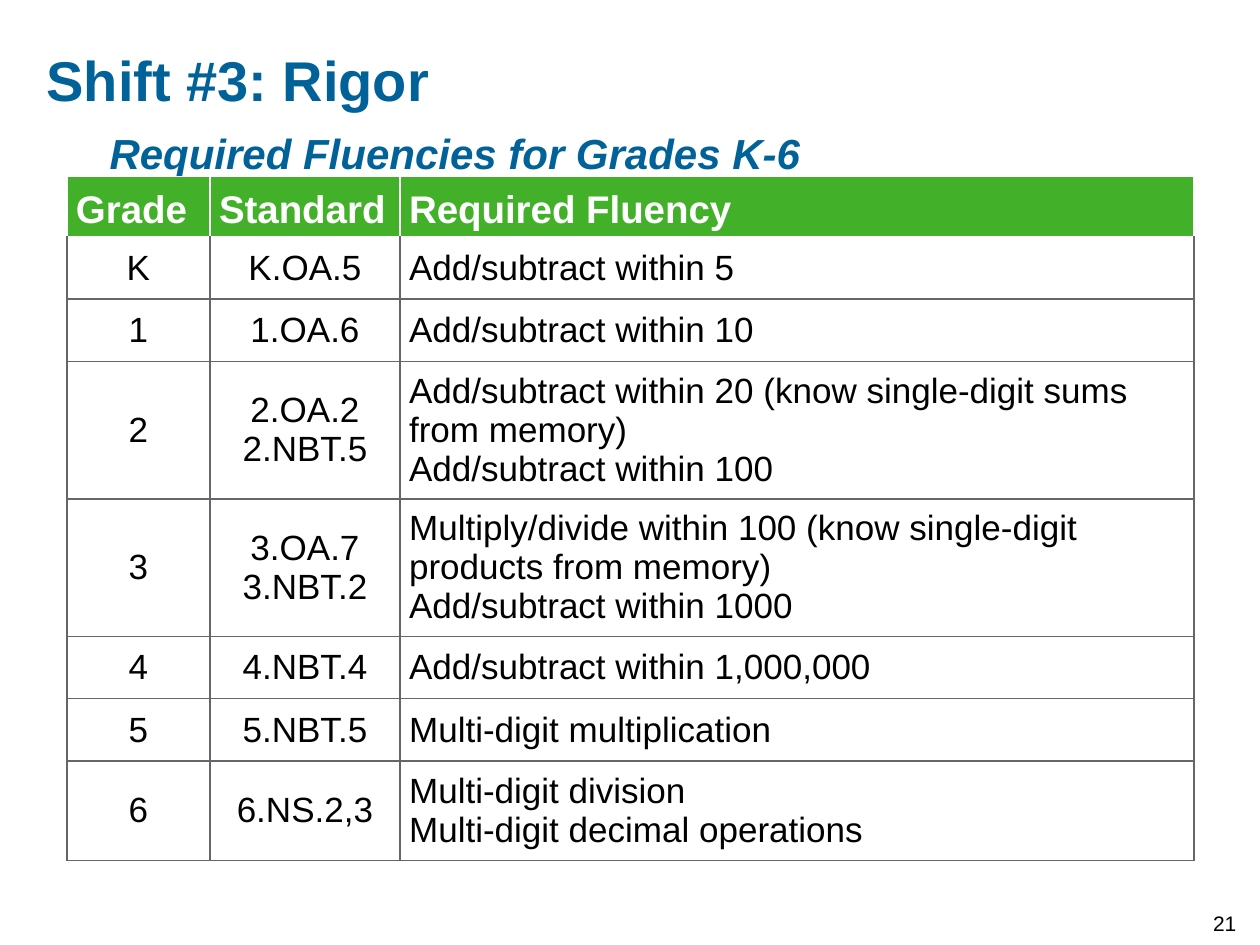
from lxml import etree
from pptx import Presentation
from pptx.dml.color import RGBColor
from pptx.enum.text import MSO_ANCHOR, MSO_AUTO_SIZE, PP_ALIGN
from pptx.oxml.ns import qn
from pptx.util import Pt

LEFT, CENTER, RIGHT = PP_ALIGN.LEFT, PP_ALIGN.CENTER, PP_ALIGN.RIGHT
MIDDLE, BOTTOM = MSO_ANCHOR.MIDDLE, MSO_ANCHOR.BOTTOM
TITLE_ONLY = 5
FONT = "Arial"
COLORS = {"blue": "006298", "green": "43B02A", "grey": "63666A",
          "white": "FFFFFF", "black": "000000"}

HEADINGS = ["Grade", "Standard", "Required Fluency"]
FLUENCIES = [
    ("K", "K.OA.5", "Add/subtract within 5"),
    ("1", "1.OA.6", "Add/subtract within 10"),
    ("2", "2.OA.2\n2.NBT.5",
     "Add/subtract within 20 (know single-digit sums from memory)\n"
     "Add/subtract within 100"),
    ("3", "3.OA.7\n3.NBT.2",
     "Multiply/divide within 100 (know single-digit products from memory)\n"
     "Add/subtract within 1000"),
    ("4", "4.NBT.4", "Add/subtract within 1,000,000"),
    ("5", "5.NBT.5", "Multi-digit multiplication"),
    ("6", "6.NS.2,3", "Multi-digit division\nMulti-digit decimal operations"),
]
COLUMN_WIDTHS = [81.8, 108.6, 453.6]
ROW_HEIGHTS = [34.4, 35.6, 35.6, 78.6, 78.6, 35.6, 35.6, 56.8]


def set_font(font, size, color, bold=False, italic=False):
    font.name = FONT
    font.size = Pt(size)
    font.bold = bold
    font.italic = italic
    font.color.rgb = RGBColor.from_string(COLORS[color])


def add_title(slide, heading, subtitle):
    """Fill the title with a heading and a tabbed subtitle on a second line."""
    title = slide.shapes.title
    title.left, title.top, title.width, title.height = (
        Pt(19.4), Pt(21.6), Pt(648), Pt(85))
    frame = title.text_frame
    frame.auto_size = MSO_AUTO_SIZE.NONE
    frame.vertical_anchor = BOTTOM
    para = frame.paragraphs[0]
    para.alignment = LEFT
    tabs = etree.SubElement(para._p.get_or_add_pPr(), qn("a:tabLst"))
    etree.SubElement(tabs, qn("a:tab"), pos=str(Pt(36)), algn="l")

    span = para.add_run()
    span.text = heading
    set_font(span.font, 32, "blue", bold=True)
    para.add_line_break()
    for text, size, italic in [("\t", 32, False), (subtitle, 24, True)]:
        span = para.add_run()
        span.text = text
        set_font(span.font, size, "blue", bold=True, italic=italic)


def set_borders(cell, color, top_color):
    properties = cell._tc.get_or_add_tcPr()
    for side in "LRTB":
        line = etree.SubElement(properties, qn(f"a:ln{side}"), w=str(Pt(1)))
        fill = etree.SubElement(line, qn("a:solidFill"))
        etree.SubElement(fill, qn("a:srgbClr"),
                         val=COLORS[top_color if side == "T" else color])


def fill_cell(cell, text, is_heading, alignment):
    cell.vertical_anchor = MIDDLE
    cell.margin_left = cell.margin_right = Pt(5.2)
    cell.margin_top = cell.margin_bottom = 0
    cell.text = text
    for para in cell.text_frame.paragraphs:
        para.alignment = alignment
        if is_heading:
            para.line_spacing = 1.15
            set_font(para.font, 22, "white", bold=True)
        else:
            set_font(para.font, 20, "black")


def add_fluency_table(slide):
    rows = [HEADINGS, *FLUENCIES]
    table = slide.shapes.add_table(
        len(rows), len(HEADINGS), Pt(38.2), Pt(101),
        Pt(sum(COLUMN_WIDTHS)), Pt(sum(ROW_HEIGHTS))).table
    table.horz_banding = False
    for column, width in zip(table.columns, COLUMN_WIDTHS):
        column.width = Pt(width)
    for row, height in zip(table.rows, ROW_HEIGHTS):
        row.height = Pt(height)

    for r, texts in enumerate(rows):
        is_heading = r == 0
        for c, text in enumerate(texts):
            cell = table.cell(r, c)
            centered = not is_heading and c < 2
            fill_cell(cell, text, is_heading, CENTER if centered else LEFT)
            set_borders(cell, "white" if is_heading else "grey",
                        "white" if r < 2 else "grey")
            if is_heading:
                cell.fill.solid()
                cell.fill.fore_color.rgb = RGBColor.from_string(COLORS["green"])
            else:
                cell.fill.background()


def add_page_number(slide, number):
    box = slide.shapes.add_textbox(Pt(545.8), Pt(514.8), Pt(167.8), Pt(25.2))
    frame = box.text_frame
    frame.word_wrap = True
    frame.vertical_anchor = MIDDLE
    para = frame.paragraphs[0]
    para.text = number
    para.alignment = RIGHT
    set_font(para.font, 12, "black")


def main():
    deck = Presentation()
    deck.slide_width, deck.slide_height = Pt(720), Pt(540)
    slide = deck.slides.add_slide(deck.slide_layouts[TITLE_ONLY])
    add_title(slide, "Shift #3: Rigor", "Required Fluencies for Grades K-6")
    add_fluency_table(slide)
    add_page_number(slide, "21")
    deck.save("out.pptx")


if __name__ == "__main__":
    main()
